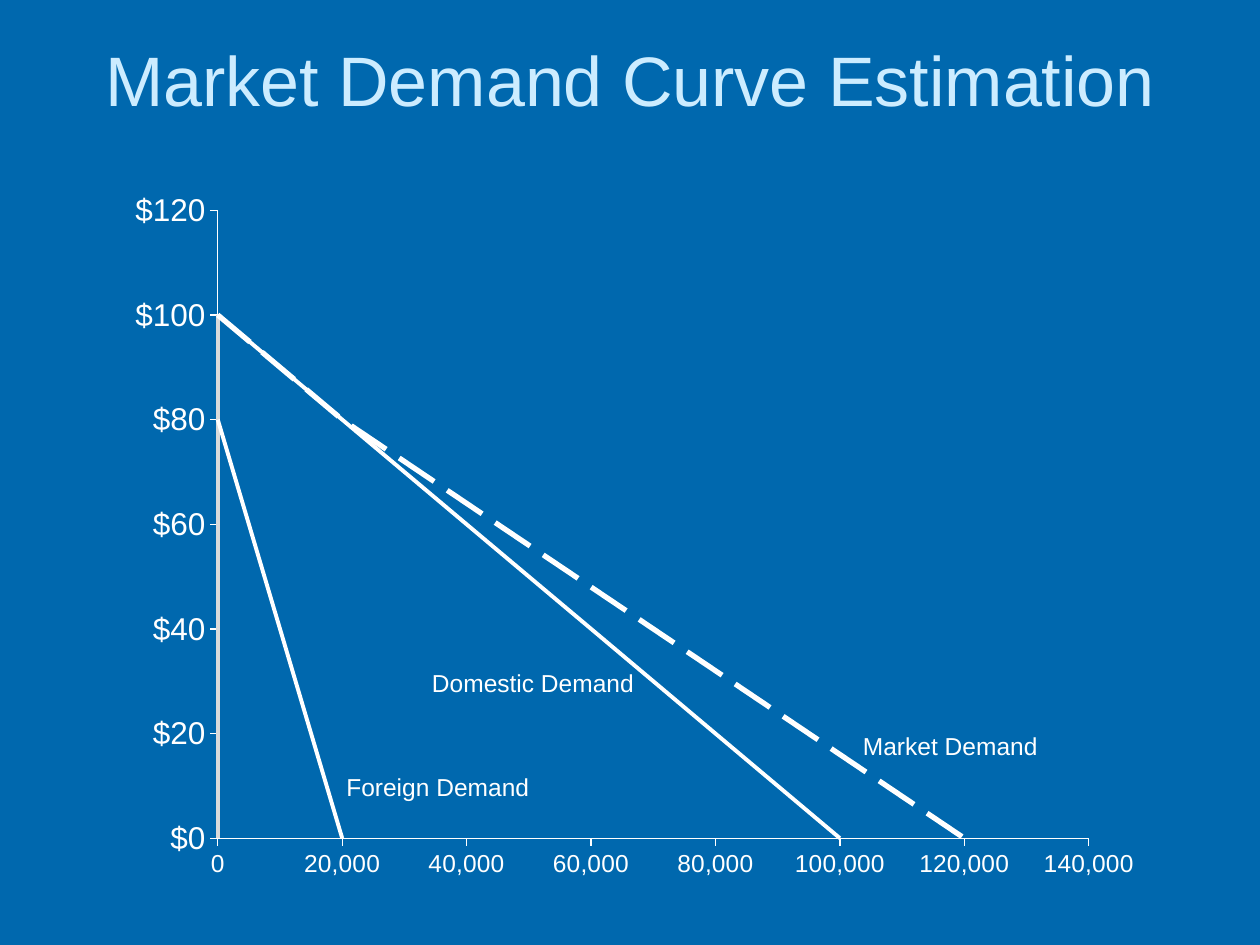
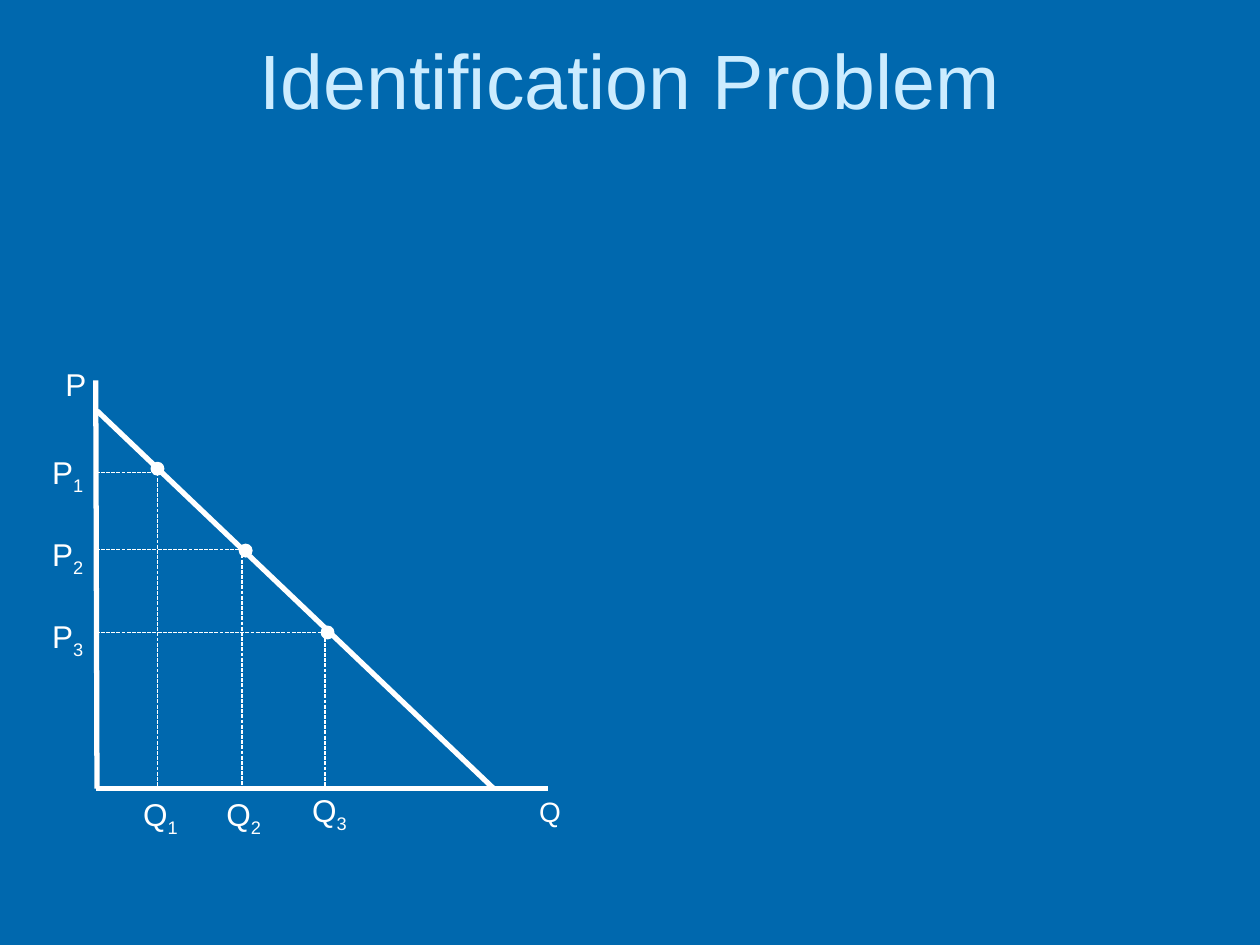
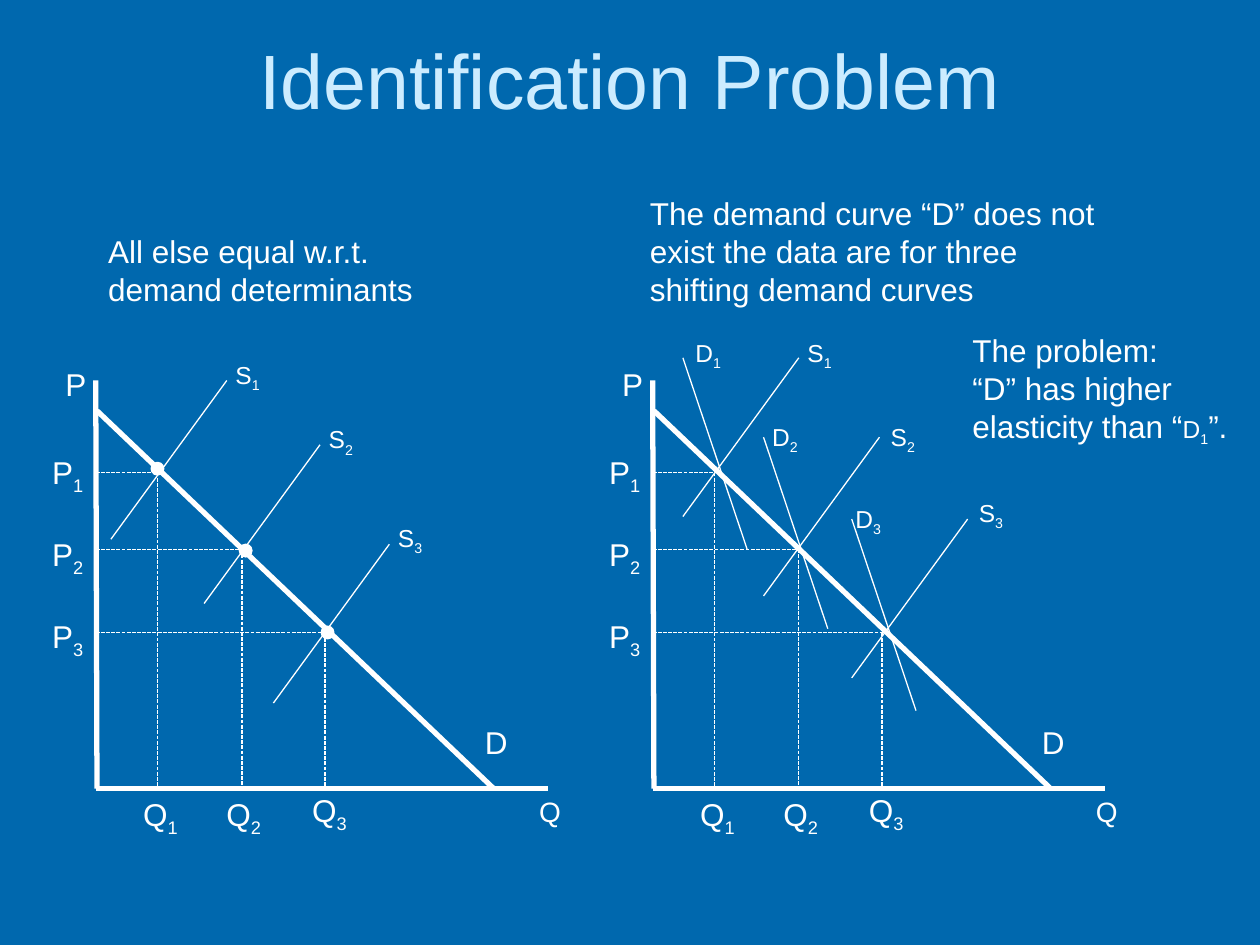
import pptx
import pptx.chart.data
import pptx.dml.color
import pptx.enum.chart
import pptx.enum.dml
import pptx.enum.shapes
import pptx.enum.text
import pptx.oxml
import pptx.oxml.ns
import pptx.util

Inches = pptx.util.Inches
Pt = pptx.util.Pt
ALIGN = pptx.enum.text.PP_ALIGN
DASH = pptx.enum.dml.MSO_LINE

FONT = "Arial"
COLORS = {"background": "0068AE", "title": "CCECFF", "ink": "FFFFFF", "grey": "DADADA"}

PANEL_STEP = 4.42  # from the left diagram to the right one
AXIS_X, AXIS_Y = 0.76, 6.26
# quantity, price, left and top of the quantity label
POINTS = [(1.25, 3.75, 1.0, 6.26), (1.92, 4.36, 1.66, 6.26), (2.58, 5.02, 2.34, 6.23)]
DOTS = [(1.2, 3.67), (1.9, 4.32), (2.55, 4.97)]
# upper end of each curve, then the place of its label
LEFT_SUPPLY = [(1.8, 3.02, 1.77, 2.81), (2.54, 3.53, 2.51, 3.32), (3.09, 4.32, 3.06, 4.1)]
RIGHT_SUPPLY = [(6.34, 2.84, 6.31, 2.63), (6.98, 3.47, 6.97, 3.3), (7.68, 4.12, 7.67, 3.9)]
RIGHT_DEMAND = [(5.42, 2.84, 5.42, 2.63), (6.06, 3.47, 6.03, 3.3), (6.76, 4.12, 6.69, 3.95)]
SUPPLY_RUN = (-0.92, 1.26)
DEMAND_RUN = (0.51, 1.52)


def rgb(name):
    return pptx.dml.color.RGBColor.from_string(COLORS[name])


def style_line(line, width=0.75, color="ink", dash=None):
    line.color.rgb = rgb(color)
    line.width = Pt(width)
    if dash:
        line.dash_style = dash


def add_run(p, text, size, color="ink", subscript=False):
    r = p.add_run()
    r.text = text
    r.font.name = FONT
    r.font.size = Pt(size)
    r.font.color.rgb = rgb(color)
    if subscript:
        r._r.get_or_add_rPr().set("baseline", "-25000")


def add_slide(prs, title, size=44):
    s = prs.slides.add_slide(prs.slide_layouts.get_by_name("Title Only"))
    sp = s.shapes.title
    sp.left, sp.top, sp.width, sp.height = Inches(0.5), 0, Inches(9), Inches(1.25)
    sp.text_frame.vertical_anchor = pptx.enum.text.MSO_ANCHOR.MIDDLE
    p = sp.text_frame.paragraphs[0]
    p.alignment = ALIGN.CENTER
    add_run(p, title, size, "title")
    return s


def add_text(shapes, at, *paragraphs, align=ALIGN.LEFT):
    """Each paragraph is a list of (text, size) or (text, size, subscript) runs."""
    sp = shapes.add_textbox(*map(Inches, at))
    tf = sp.text_frame
    tf.word_wrap = True
    tf.auto_size = pptx.enum.text.MSO_AUTO_SIZE.SHAPE_TO_FIT_TEXT
    for i, runs in enumerate(paragraphs):
        p = tf.add_paragraph() if i else tf.paragraphs[0]
        p.alignment = align
        for text, size, *subscript in runs:
            add_run(p, text, size, subscript=bool(subscript))


def add_indexed(shapes, letter, index, size, at, align=ALIGN.LEFT):
    """A letter with a subscript number."""
    add_text(shapes, at, [(letter, size), (str(index), size, True)], align=align)


def add_line(shapes, x1, y1, x2, y2, width=0.75, dash=None):
    line = shapes.add_connector(pptx.enum.shapes.MSO_CONNECTOR.STRAIGHT,
                                *map(Inches, (x1, y1, x2, y2)))
    style_line(line.line, width, dash=dash)
    properties = line._element.spPr
    properties.append(properties.makeelement(pptx.oxml.ns.qn("a:effectLst"), {}))


def add_dot(shapes, x, y):
    sp = shapes.add_shape(pptx.enum.shapes.MSO_SHAPE.OVAL,
                          Inches(x), Inches(y), Inches(0.1), Inches(0.1))
    sp.shadow.inherit = False
    sp.fill.solid()
    sp.fill.fore_color.rgb = rgb("ink")
    style_line(sp.line)


def add_diagram(s, dx=0, demand_label=True, dots=True):
    """Axes, the demand line and three price and quantity pairs, moved right by dx."""
    shapes = s.shapes.add_group_shape().shapes
    left = AXIS_X + dx
    add_line(shapes, left, 3.02, left + 0.01, AXIS_Y, 3)
    add_line(shapes, left + 3.59, AXIS_Y, left, AXIS_Y, 3)
    add_text(shapes, (0.42 + dx, 2.85, 0.34, 0.4), [("P", 18)])
    add_text(shapes, (4.18 + dx, AXIS_Y, 0.34, 0.37), [("Q", 16)])
    add_line(shapes, 3.92 + dx, AXIS_Y, 0.77 + dx, 3.26, 3)
    if demand_label:
        add_text(shapes, (3.75 + dx, 5.69, 0.34, 0.4), [("D", 18)])
    for i, (x, y, label_x, label_y) in enumerate(POINTS):
        shapes = s.shapes.add_group_shape().shapes
        add_line(shapes, x + dx, y, x + dx, AXIS_Y, dash=DASH.SQUARE_DOT)
        add_line(shapes, left, y, x + dx, y, dash=DASH.SQUARE_DOT)
        add_indexed(shapes, "P", i + 1, 18, (0.25 + dx, 3.55 + 0.65 * i, 0.51, 0.4), ALIGN.RIGHT)
        add_indexed(shapes, "Q", i + 1, 18, (label_x + dx, label_y, 0.51, 0.4), ALIGN.RIGHT)
        if dots:
            add_dot(shapes, *DOTS[i])


def add_curves(s, letter, curves, run):
    for i, (x, y, label_x, label_y) in enumerate(curves, 1):
        shapes = s.shapes.add_group_shape().shapes
        add_line(shapes, x, y, x + run[0], y + run[1])
        add_indexed(shapes, letter, i, 14, (label_x, label_y, 0.41, 0.34))


def style_axis(axis, maximum, step, number_format, size):
    axis.minimum_scale, axis.maximum_scale, axis.major_unit = 0, maximum, step
    axis.has_major_gridlines = False
    axis.major_tick_mark = pptx.enum.chart.XL_TICK_MARK.OUTSIDE
    axis.minor_tick_mark = pptx.enum.chart.XL_TICK_MARK.NONE
    style_line(axis.format.line)
    labels = axis.tick_labels
    labels.number_format, labels.number_format_is_linked = number_format, False
    labels.font.size = Pt(size)
    labels.font.name = FONT
    labels.font.color.rgb = rgb("ink")


def set_plot_layout(chart, **fractions):
    """Place the inner plot area, in fractions of the chart."""
    area = chart._chartSpace.chart.plotArea
    for old in area.findall(pptx.oxml.ns.qn("c:layout")):
        area.remove(old)
    values = "".join(f'<c:{k} val="{v}"/>' for k, v in fractions.items())
    area.insert(0, pptx.oxml.parse_xml(
        f'<c:layout {pptx.oxml.ns.nsdecls("c")}><c:manualLayout>'
        '<c:layoutTarget val="inner"/><c:xMode val="edge"/><c:yMode val="edge"/>'
        f'{values}</c:manualLayout></c:layout>'))


def add_demand_chart(s):
    prices = range(100, -1, -20)
    # quantities, line colour, width, dash
    series = [(range(0, 100001, 20000), "ink", 2.25, None),
              (range(-5000, 20001, 5000), "ink", 2.25, None),
              ([0, 20000, 45000, 70000, 95000, 120000], "ink", 3, DASH.LONG_DASH),
              (range(1, 7), "grey", 2.25, None)]
    data = pptx.chart.data.XyChartData()
    for i, (quantities, *_) in enumerate(series, 1):
        xy = data.add_series(f"Series {i}")
        for quantity, price in zip(quantities, prices):
            xy.add_data_point(quantity, price)
    chart = s.shapes.add_chart(pptx.enum.chart.XL_CHART_TYPE.XY_SCATTER_SMOOTH_NO_MARKERS,
                               *map(Inches, (0.92, 1.42, 8.25, 5.67)), data).chart
    chart.has_title = chart.has_legend = False
    chart.font.name = FONT
    chart.font.size = Pt(18)
    chart.font.color.rgb = rgb("ink")
    plot = chart.plots[0]
    plot.vary_by_categories = False
    for drawn, (_, color, width, dash) in zip(plot.series, series):
        drawn.smooth = True
        style_line(drawn.format.line, width, color, dash)
    style_axis(chart.category_axis, 140000, 20000, "#,##0", 14)
    style_axis(chart.value_axis, 120, 20, '"$"#,##0', 18)
    set_plot_layout(chart, x=0.098, y=0.044, w=0.838, h=0.879)


def main():
    prs = pptx.Presentation()
    prs.slide_width, prs.slide_height = Inches(10), Inches(7.5)
    fill = prs.slide_master.background.fill
    fill.solid()
    fill.fore_color.rgb = rgb("background")

    s = add_slide(prs, "Market Demand Curve Estimation", 40)
    add_demand_chart(s)
    for name, x, y in [("Foreign", 2.65, 6.08), ("Domestic", 3.33, 5.25), ("Market", 6.75, 5.75)]:
        add_text(s.shapes, (x, y, 1.92, 0.34), [(f"{name} Demand", 14)])

    s = add_slide(prs, "Identification Problem")
    add_diagram(s, demand_label=False)

    s = add_slide(prs, "Identification Problem")
    add_diagram(s)
    add_diagram(s, PANEL_STEP, dots=False)
    add_curves(s, "S", LEFT_SUPPLY, SUPPLY_RUN)
    add_curves(s, "S", RIGHT_SUPPLY, SUPPLY_RUN)
    add_curves(s, "D", RIGHT_DEMAND, DEMAND_RUN)
    add_text(s.shapes, (0.76, 1.79, 3.16, 0.71),
             [("All else equal w.r.t. demand determinants", 18)])
    add_text(s.shapes, (5.06, 1.49, 3.97, 1.01),
             [("The demand curve “D” does not exist the data are for three "
               "shifting demand curves", 18)])
    add_text(s.shapes, (7.62, 2.58, 2.3, 1.01), [("The problem:", 18)],
             [("“D” has higher elasticity than “", 18), ("D", 14), ("1", 14, True), ("”.", 18)])

    prs.save("out.pptx")


if __name__ == "__main__":
    main()
